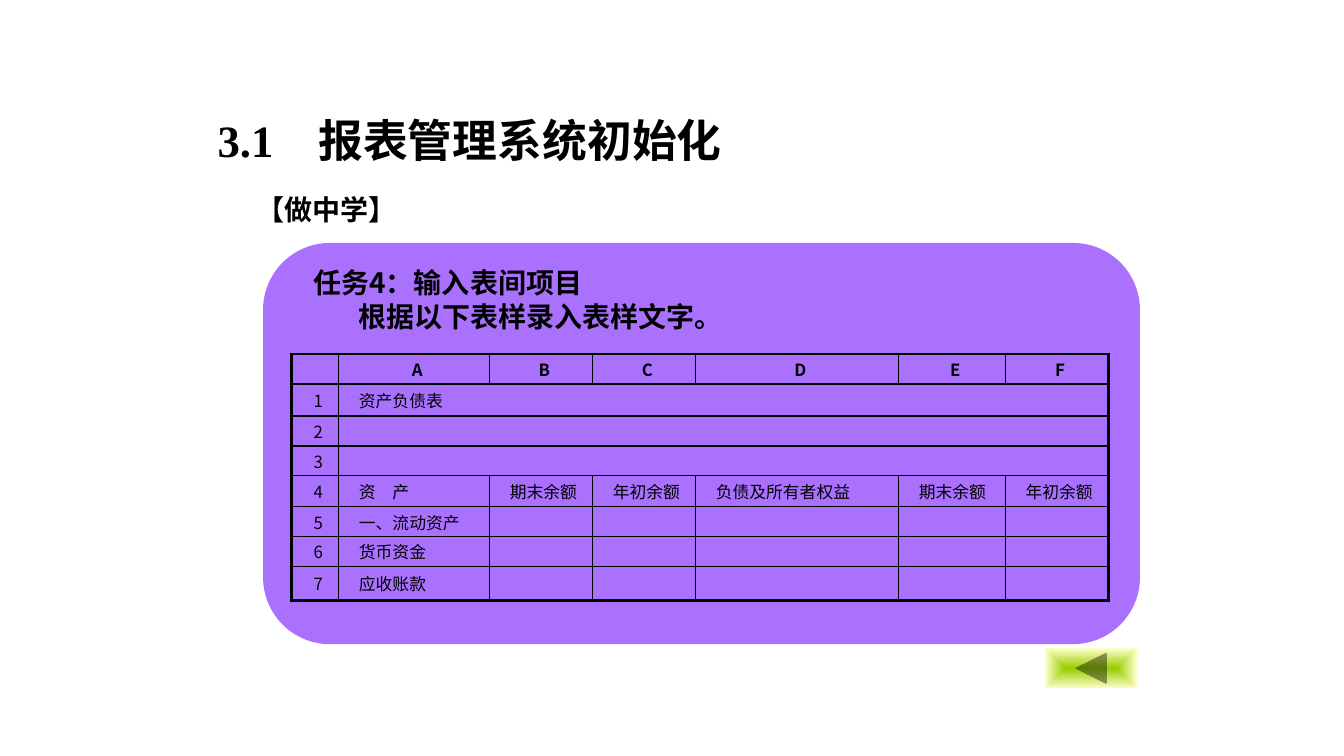
from dataclasses import dataclass

from lxml.etree import SubElement as Sub
from pptx import Presentation
from pptx.dml.color import RGBColor as RGB
from pptx.enum.shapes import MSO_SHAPE as SHAPE
from pptx.enum.text import MSO_ANCHOR as ANCHOR, PP_ALIGN as ALIGN
from pptx.oxml.ns import qn
from pptx.util import Pt

COLORS = {"ink": "000000", "panel": "AA71FF", "lime": "99CC00", "cream": "FFFFCC"}
SANS, SERIF = "Noto Sans CJK SC", "Times New Roman"


@dataclass(frozen=True)
class Label:
    lines: tuple[str, ...]
    box: tuple[float, float, float, float]
    size: float
    font: str = SANS
    indents: tuple[float, ...] = (0,)
    spacing: float | None = None
    tab: float | None = None
    anchor: ANCHOR = ANCHOR.MIDDLE
    wrap: bool = True


@dataclass(frozen=True)
class Block:
    kind: SHAPE
    box: tuple[float, float, float, float]
    fill: str
    edge: str | None = None


PANEL = Block(SHAPE.ROUNDED_RECTANGLE, (187.9, 173.5, 626.4, 286.6), "panel")
BACK = Block(SHAPE.ACTION_BUTTON_BACK_OR_PREVIOUS, (746.6, 463, 65.5, 28.8), "lime", "cream")
LABELS = (
    Label(("任务4：输入表间项目", "根据以下表样录入表样文字。"),
          (216.7, 186, 637.9, 55.4), 20, indents=(0, 32), spacing=24),
    Label(("【做中学】",), (176.4, 133.9, 115.2, 31.7), 20, SERIF, wrap=False),
    Label(("3.1\t报表管理系统初始化",), (148.3, 74.2, 640.8, 46.1), 32, SERIF,
          spacing=41.5, tab=63, anchor=ANCHOR.TOP),
)

TABLE_AT = (208.1, 252.9)
COLS = (33.9, 107.8, 73.6, 73.6, 145, 76.3, 73.6)
ROWS = (21.4, 22.9, 21.4, 21.4, 22.1, 21.4, 21.4, 24.2)
HEADERS = "ABCDEF"
BODY = (
    ("资产负债表",),
    (),
    (),
    ("资　产", "期末余额", "年初余额", "负债及所有者权益", "期末余额", "年初余额"),
    ("一、流动资产",),
    ("货币资金",),
    ("应收账款",),
)
MERGED_ROWS = (1, 2, 3)


def write(p, text: str, *, size: float, font: str = SANS, bold: bool = False,
          align: ALIGN = ALIGN.LEFT, indent: float = 0,
          spacing: float | None = None, tab: float | None = None) -> None:
    p.alignment = align
    if spacing:
        p.line_spacing = Pt(spacing)
    pPr = p._p.get_or_add_pPr()
    pPr.set("marL", str(int(Pt(indent))))
    pPr.set("indent", "0")
    if tab:
        Sub(Sub(pPr, qn("a:tabLst")), qn("a:tab"), pos=str(int(Pt(tab))), algn="l")
    if not text:
        Sub(p._p, qn("a:endParaRPr"), sz=str(int(size * 100)))
        return
    r = p.add_run()
    r.text = text
    r.font.size, r.font.name, r.font.bold = Pt(size), font, bold
    r.font.color.rgb = RGB.from_string(COLORS["ink"])
    Sub(r._r.get_or_add_rPr(), qn("a:ea"), typeface=SANS)


def add_block(s, block: Block) -> None:
    sp = s.shapes.add_shape(block.kind, *map(Pt, block.box))
    sp.shadow.inherit = False
    sp.line.fill.background()
    if block.edge is None:
        sp.fill.solid()
        sp.fill.fore_color.rgb = RGB.from_string(COLORS[block.fill])
        return
    sp.fill.gradient()
    for stop, name, position in zip(sp.fill.gradient_stops, (block.fill, block.edge), (0, 1)):
        stop.color.rgb = RGB.from_string(COLORS[name])
        stop.position = position
    grad = sp._element.spPr.find(qn("a:gradFill"))
    grad.remove(grad.find(qn("a:lin")))
    center = dict.fromkeys("ltrb", "50000")
    Sub(Sub(grad, qn("a:path"), {"path": "rect"}), qn("a:fillToRect"), center)


def add_label(s, label: Label) -> None:
    tf = s.shapes.add_textbox(*map(Pt, label.box)).text_frame
    tf.word_wrap = label.wrap
    tf.vertical_anchor = label.anchor
    for i, (text, indent) in enumerate(zip(label.lines, label.indents)):
        p = tf.add_paragraph() if i else tf.paragraphs[0]
        write(p, text, size=label.size, font=label.font, bold=True, indent=indent,
              spacing=label.spacing, tab=label.tab)


def set_borders(cell, outer: dict[str, bool]) -> None:
    tcPr = cell._tc.get_or_add_tcPr()
    for side, is_outer in outer.items():
        ln = Sub(tcPr, qn(f"a:ln{side}"), w=str(int(Pt(2.25 if is_outer else 1))))
        Sub(Sub(ln, qn("a:solidFill")), qn("a:srgbClr"), val=COLORS["ink"])


def cell_text(row: int, col: int) -> str:
    if row == 0:
        return f"{HEADERS[col - 1]} " if col else ""
    if col == 0:
        return f"{row} "
    entries = BODY[row - 1]
    return entries[col - 1] if col <= len(entries) else ""


def add_sheet(s) -> None:
    table = s.shapes.add_table(len(ROWS), len(COLS), *map(Pt, TABLE_AT),
                               Pt(sum(COLS)), Pt(sum(ROWS))).table
    table.first_row = table.horz_banding = False
    for column, width in zip(table.columns, COLS):
        column.width = Pt(width)
    for row, height in zip(table.rows, ROWS):
        row.height = Pt(height)
    last_row, last_col = len(ROWS) - 1, len(COLS) - 1
    for row in MERGED_ROWS:
        table.cell(row, 1).merge(table.cell(row, last_col))
    for row in range(len(ROWS)):
        for col in range(len(COLS)):
            cell = table.cell(row, col)
            cell.margin_top = cell.margin_bottom = Pt(1.8)
            cell.vertical_anchor = ANCHOR.MIDDLE
            right = col == last_col or (row in MERGED_ROWS and col == 1)
            set_borders(cell, {"L": col == 0, "R": right, "T": row == 0, "B": row == last_row})
            cell.fill.background()
            centered = row == 0 or col == 0
            write(cell.text_frame.paragraphs[0], cell_text(row, col), size=12, bold=row == 0,
                  align=ALIGN.CENTER if centered else ALIGN.LEFT, indent=7.2)


def main() -> None:
    prs = Presentation()
    prs.slide_width, prs.slide_height = Pt(960), Pt(540)
    s = prs.slides.add_slide(prs.slide_layouts[6])
    add_block(s, PANEL)
    add_sheet(s)
    add_block(s, BACK)
    for label in LABELS:
        add_label(s, label)
    prs.save("out.pptx")


if __name__ == "__main__":
    main()
